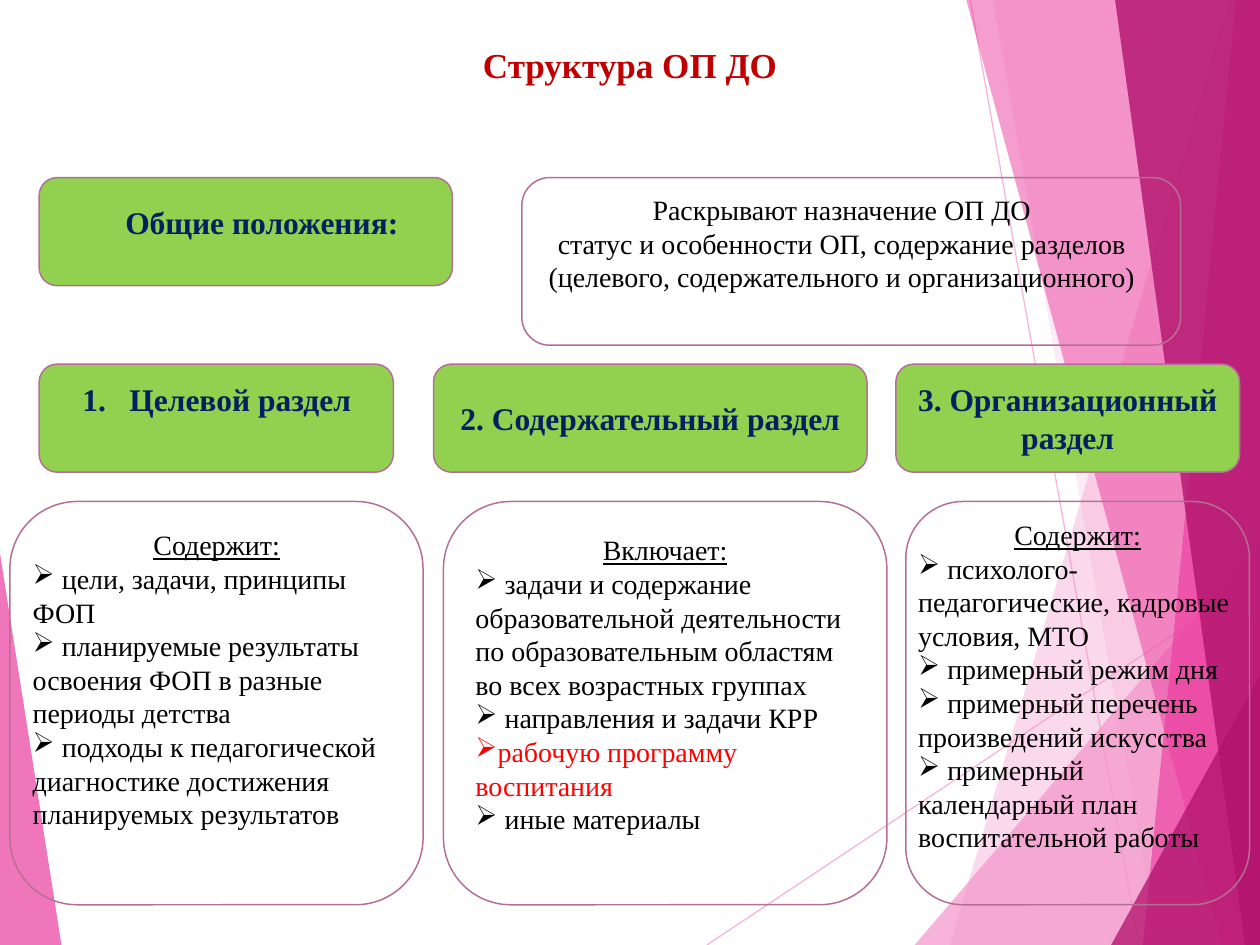
from lxml import etree
from pptx import Presentation
from pptx import util as u
from pptx.dml.color import RGBColor
from pptx.enum import shapes, text
from pptx.oxml.ns import qn

COLORS = {
    "title": "C00000", "heading": "002060", "body": "000000", "accent": "FF0000",
    "green": "92D050", "outline": "B56F96",
    "light": "F496CB", "pink": "EB3D9F", "dark": "B2136D",
}
W, H = 25.4, 19.05


def write(tf, words, size=16, color="body", bold=False, underline=False,
          align=text.PP_ALIGN.LEFT, bullet=None, numbered=False):
    """Add one formatted paragraph to a text frame."""
    p = tf.add_paragraph() if tf.text else tf.paragraphs[0]
    p.alignment = align
    r = p.add_run()
    r.text = words
    r.font.name, r.font.size = "Times New Roman", u.Pt(size)
    r.font.bold, r.font.underline = bold, underline
    r.font.color.rgb = RGBColor.from_string(COLORS[color])
    pPr = p._p.get_or_add_pPr()
    indent = u.Cm(0.95) if numbered else 0
    pPr.set("marL", str(indent))
    pPr.set("indent", str(-indent))
    if numbered:
        etree.SubElement(pPr, qn("a:buAutoNum"), type="arabicPeriod")
    elif bullet:
        etree.SubElement(pPr, qn("a:buChar"), char=bullet)


class Deck:
    """Hold the style and the current slide."""

    def __init__(self):
        self.prs = Presentation()
        self.prs.slide_width, self.prs.slide_height = u.Cm(W), u.Cm(H)
        self.s = self.prs.slides.add_slide(self.prs.slide_layouts[6])

    def fade(self, sp, percent):
        """Set the opacity of every colour in a shape."""
        for clr in sp.element.spPr.iter(qn("a:srgbClr")):
            etree.SubElement(clr, qn("a:alpha"), val=str(percent * 1000))

    def line(self, x1, y1, x2, y2):
        """Draw a thin translucent line."""
        c = self.s.shapes.add_connector(
            shapes.MSO_CONNECTOR.STRAIGHT, u.Cm(x1), u.Cm(y1), u.Cm(x2), u.Cm(y2))
        c.line.width = u.Pt(0.75)
        c.line.color.rgb = RGBColor.from_string(COLORS["light"])
        self.fade(c, 70)
        etree.SubElement(c.element.spPr, qn("a:effectLst"))

    def polygon(self, color, opacity, *points):
        """Draw a translucent polygon."""
        pts = [(u.Cm(x), u.Cm(y)) for x, y in points]
        builder = self.s.shapes.build_freeform(*pts[0], scale=1.0)
        builder.add_line_segments(pts[1:], close=True)
        sp = builder.convert_to_shape()
        sp.shadow.inherit = False
        sp.fill.solid()
        sp.fill.fore_color.rgb = RGBColor.from_string(COLORS[color])
        sp.line.fill.background()
        self.fade(sp, opacity)

    def box(self, x, y, w, h, fill=None):
        """Draw a rounded box and return its text frame."""
        sp = self.s.shapes.add_shape(
            shapes.MSO_SHAPE.ROUNDED_RECTANGLE, u.Cm(x), u.Cm(y), u.Cm(w), u.Cm(h))
        sp.shadow.inherit = False
        if fill:
            sp.fill.solid()
            sp.fill.fore_color.rgb = RGBColor.from_string(COLORS[fill])
        else:
            sp.fill.background()
        sp.line.width = u.Pt(0.85)
        sp.line.color.rgb = RGBColor.from_string(COLORS["outline"])
        tf = sp.text_frame
        tf.word_wrap, tf.vertical_anchor = True, text.MSO_ANCHOR.MIDDLE
        return tf

    def label(self, x, y, w, h):
        """Add a text box and return its text frame."""
        tf = self.s.shapes.add_textbox(u.Cm(x), u.Cm(y), u.Cm(w), u.Cm(h)).text_frame
        tf.word_wrap = True
        return tf


def contents(tf, title, items):
    """Write an underlined title and its bulleted items."""
    write(tf, title, underline=True, align=text.PP_ALIGN.CENTER)
    for item, color in items:
        write(tf, item, color=color, bullet="➢")


def backdrop(deck):
    """Draw the slanted bands at the slide edges."""
    deck.line(14.25, H, 25.43, 11.61)
    deck.line(19.56, 0, 22.96, H)

    def band(color, opacity, top, bottom):
        deck.polygon(color, opacity, (top, 0), (bottom, H), (W, H), (W, 0))

    band("light", 36, 24.77, 19.15)
    band("light", 20, 20.02, 23.34)
    deck.polygon("light", 72, (18.44, H), (W, 10.9), (W, H))
    band("pink", 50, 19.48, 24.64)
    band("pink", 66, 24.92, 23.04)
    band("dark", 80, 22.48, 25.1)
    deck.polygon("dark", 76, (22.4, H), (W, 13.6), (W, H))
    deck.polygon("pink", 70, (0, 11.15), (1.24, H), (0, H))


def main():
    deck = Deck()
    backdrop(deck)
    center = text.PP_ALIGN.CENTER
    heading = dict(size=18, color="heading", bold=True, align=center)

    write(deck.label(1.27, 0.76, 22.86, 2.41), "Структура ОП ДО",
          size=20, color="title", bold=True, align=center)

    deck.box(0.79, 3.58, 8.33, 2.18, "green")
    write(deck.label(1.4, 3.96, 7.92, 1.02), "Общие положения: ", **heading)
    deck.box(10.52, 3.58, 13.28, 3.38)
    tf = deck.label(10.52, 3.76, 12.9, 2.31)
    write(tf, "Раскрывают назначение ОП ДО", align=center)
    write(tf, "статус и особенности ОП, содержание разделов "
              "(целевого, содержательного и организационного)", align=center)

    columns = [(0.79, 7.14, 0.2, 8.33), (8.74, 8.74, 8.94, 8.94), (18.06, 6.93, 18.26, 6.93)]
    heads = [deck.box(x, 7.34, w, 2.18, "green") for x, w, _, _ in columns]
    bodies = [deck.box(x, 10.11, w, 8.13) for _, _, x, w in columns]
    write(deck.label(0.99, 7.54, 6.76, 1.02), "Целевой раздел", numbered=True, **heading)
    write(heads[1], "2. Содержательный раздел", **heading)
    write(heads[2], "3. Организационный раздел", **heading)

    contents(deck.label(0.41, 10.52, 7.92, 6.4), "Содержит:", [
        (" цели, задачи, принципы ФОП", "body"),
        (" планируемые результаты освоения ФОП в разные периоды детства", "body"),
        (" подходы к педагогической диагностике достижения планируемых результатов", "body"),
    ])
    bodies[1].margin_bottom = u.Cm(0.89)
    contents(bodies[1], "Включает:", [
        (" задачи и содержание образовательной деятельности по образовательным "
         "областям во всех возрастных группах", "body"),
        (" направления и задачи КРР", "body"),
        ("рабочую программу воспитания", "accent"),
        (" иные материалы", "body"),
    ])
    contents(deck.label(18.26, 10.31, 6.93, 7.87), "Содержит:", [
        (" психолого-педагогические, кадровые условия, МТО", "body"),
        (" примерный режим дня", "body"),
        (" примерный перечень произведений искусства", "body"),
        (" примерный календарный план воспитательной работы", "body"),
    ])
    deck.prs.save("out.pptx")


if __name__ == "__main__":
    main()
